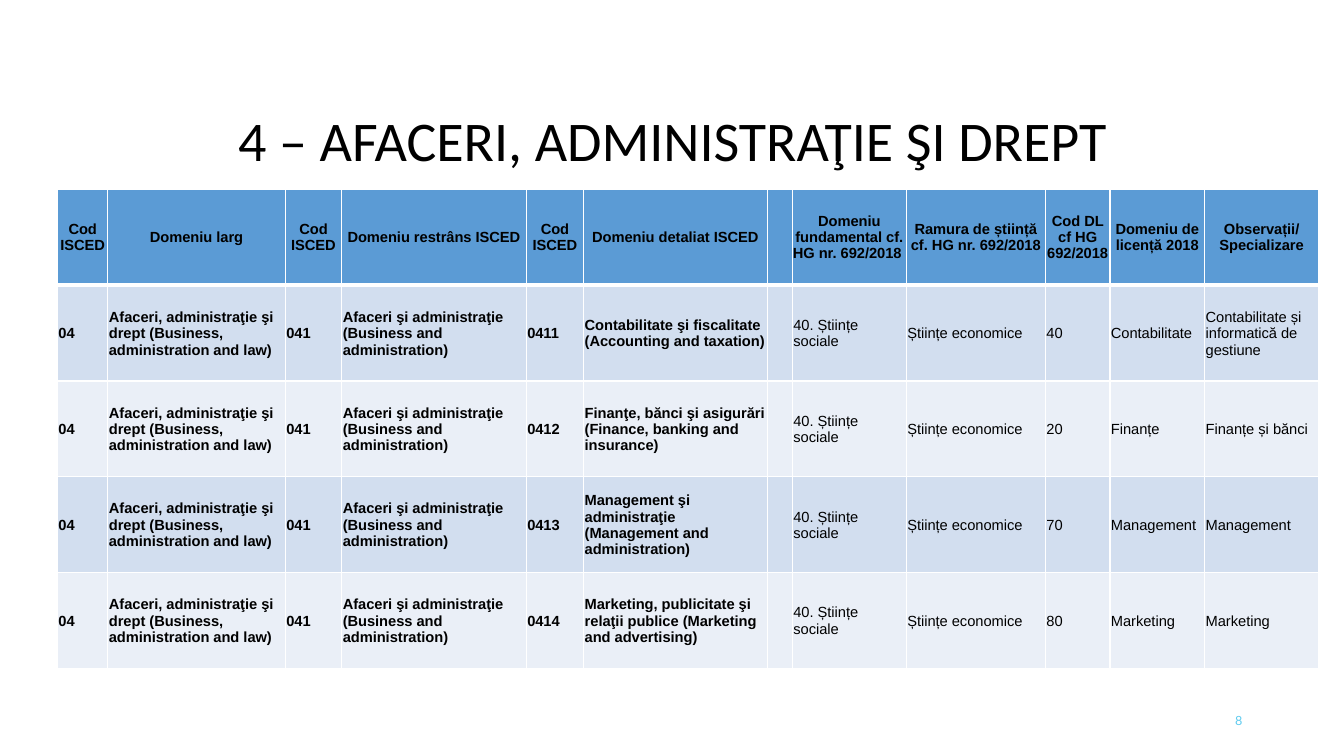
from dataclasses import dataclass

from lxml import etree
from pptx import Presentation
from pptx.dml.color import RGBColor
from pptx.enum import text
from pptx.oxml import ns
from pptx.util import Inches, Pt


@dataclass(frozen=True)
class Theme:
    ink: str = "000000"
    accent: str = "5FCBEF"
    header: str = "5B9BD5"
    bands: tuple = ("D2DEEF", "EAEFF7")
    rule: str = "FFFFFF"
    title_font: str = "Calibri"
    table_font: str = "Arial"
    number_font: str = "Lato"
    title_size: float = 40
    table_size: float = 10.5
    number_size: float = 9


class SlideBuilder:
    def __init__(self, slide, theme):
        self.slide = slide
        self.theme = theme

    def style(self, paragraph, font, size, color, align, bold=False):
        paragraph.alignment = align
        paragraph.font.name = font
        paragraph.font.size = Pt(size)
        paragraph.font.bold = bold
        paragraph.font.color.rgb = RGBColor.from_string(color)

    def title(self, wording, left, top, width, height):
        heading = self.slide.shapes.title
        heading.left, heading.top = Inches(left), Inches(top)
        heading.width, heading.height = Inches(width), Inches(height)
        frame = heading.text_frame
        frame.text = wording
        frame.auto_size = text.MSO_AUTO_SIZE.NONE
        frame.vertical_anchor = text.MSO_ANCHOR.MIDDLE
        line = frame.paragraphs[0]
        line.line_spacing = 0.9
        self.style(line, self.theme.title_font, self.theme.title_size,
                   self.theme.ink, text.PP_ALIGN.CENTER)

    def page_number(self, number, left, top, width, height):
        box = self.slide.shapes.add_textbox(
            Inches(left), Inches(top), Inches(width), Inches(height))
        frame = box.text_frame
        frame.word_wrap = True
        frame.vertical_anchor = text.MSO_ANCHOR.MIDDLE
        frame.text = number
        self.style(frame.paragraphs[0], self.theme.number_font,
                   self.theme.number_size, self.theme.accent, text.PP_ALIGN.RIGHT)

    def borders(self, cell, **widths):
        """Draw the cell's sides (L, R, T, B), each with a width in points."""
        properties = cell._tc.get_or_add_tcPr()
        for side, width in widths.items():
            line = etree.SubElement(properties, ns.qn(f"a:ln{side}"), w=str(Pt(width)))
            fill = etree.SubElement(line, ns.qn("a:solidFill"))
            etree.SubElement(fill, ns.qn("a:srgbClr"), val=self.theme.rule)

    def cell(self, cell, wording, fill, is_header, below_header, bold):
        self.borders(cell, L=1, R=1, T=3 if below_header else 1,
                     B=3 if is_header else 1)
        cell.fill.solid()
        cell.fill.fore_color.rgb = RGBColor.from_string(fill)
        cell.vertical_anchor = text.MSO_ANCHOR.MIDDLE
        inset = Inches(0 if is_header else 0.01)
        cell.margin_left = cell.margin_right = cell.margin_top = inset
        cell.margin_bottom = 0
        cell.text = wording
        align = text.PP_ALIGN.CENTER if is_header else text.PP_ALIGN.LEFT
        self.style(cell.text_frame.paragraphs[0], self.theme.table_font,
                   self.theme.table_size, self.theme.ink, align, bold)

    def table(self, rows, left, top, col_widths, row_height, bold_columns):
        grid = self.slide.shapes.add_table(
            len(rows), len(col_widths), Inches(left), Inches(top),
            Inches(sum(col_widths)), Inches(row_height * len(rows))).table
        for column, width in zip(grid.columns, col_widths):
            column.width = Inches(width)
        for r, row in enumerate(rows):
            grid.rows[r].height = Inches(row_height)
            fill = self.theme.bands[(r - 1) % 2] if r else self.theme.header
            for c, wording in enumerate(row):
                self.cell(grid.cell(r, c), wording, fill, r == 0, r == 1,
                          r == 0 or c < bold_columns)


HEADINGS = [
    "Cod ISCED", "Domeniu larg", "Cod ISCED", "Domeniu restrâns ISCED",
    "Cod ISCED", "Domeniu detaliat ISCED", "",
    "Domeniu fundamental cf. HG nr. 692/2018 ",
    "Ramura de știință cf. HG nr. 692/2018", "Cod DL cf HG 692/2018",
    "Domeniu de licență 2018", "Observații/ Specializare",
]
BROAD_FIELD = ["04", "Afaceri, administraţie şi drept (Business, administration and law)",
               "041", "Afaceri şi administraţie (Business and administration)"]
SCIENCE_BRANCH = ["", "40. Științe sociale", "Științe economice"]
# Detailed ISCED code and field, then degree code, degree field and specialisation
FIELDS = [
    ("0411", "Contabilitate şi fiscalitate (Accounting and taxation)",
     "40", "Contabilitate", "Contabilitate și informatică de gestiune"),
    ("0412", "Finanţe, bănci şi asigurări (Finance, banking and insurance)",
     "20", "Finanțe", "Finanțe și bănci"),
    ("0413", "Management şi administraţie (Management and administration)",
     "70", "Management", "Management"),
    ("0414", "Marketing, publicitate şi relaţii publice (Marketing and advertising)",
     "80", "Marketing", "Marketing"),
]
COLUMN_WIDTHS = [0.5, 1.76, 0.56, 1.83, 0.57, 1.82, 0.25, 1.13, 1.38, 0.64, 0.94, 1.13]


def main():
    deck = Presentation()
    deck.slide_width, deck.slide_height = Inches(13.33), Inches(7.5)
    title_only = deck.slide_layouts[5]
    builder = SlideBuilder(deck.slides.add_slide(title_only), Theme())
    rows = [HEADINGS] + [[*BROAD_FIELD, *field[:2], *SCIENCE_BRANCH, *field[2:]]
                         for field in FIELDS]
    builder.table(rows, 0.57, 1.88, COLUMN_WIDTHS, 0.95, bold_columns=7)
    builder.page_number("8", 9.42, 6.95, 3, 0.4)
    builder.title("4 – AFACERI, ADMINISTRAŢIE ŞI DREPT", 0.92, 1.06, 11.5, 0.72)
    deck.save("out.pptx")


if __name__ == "__main__":
    main()
